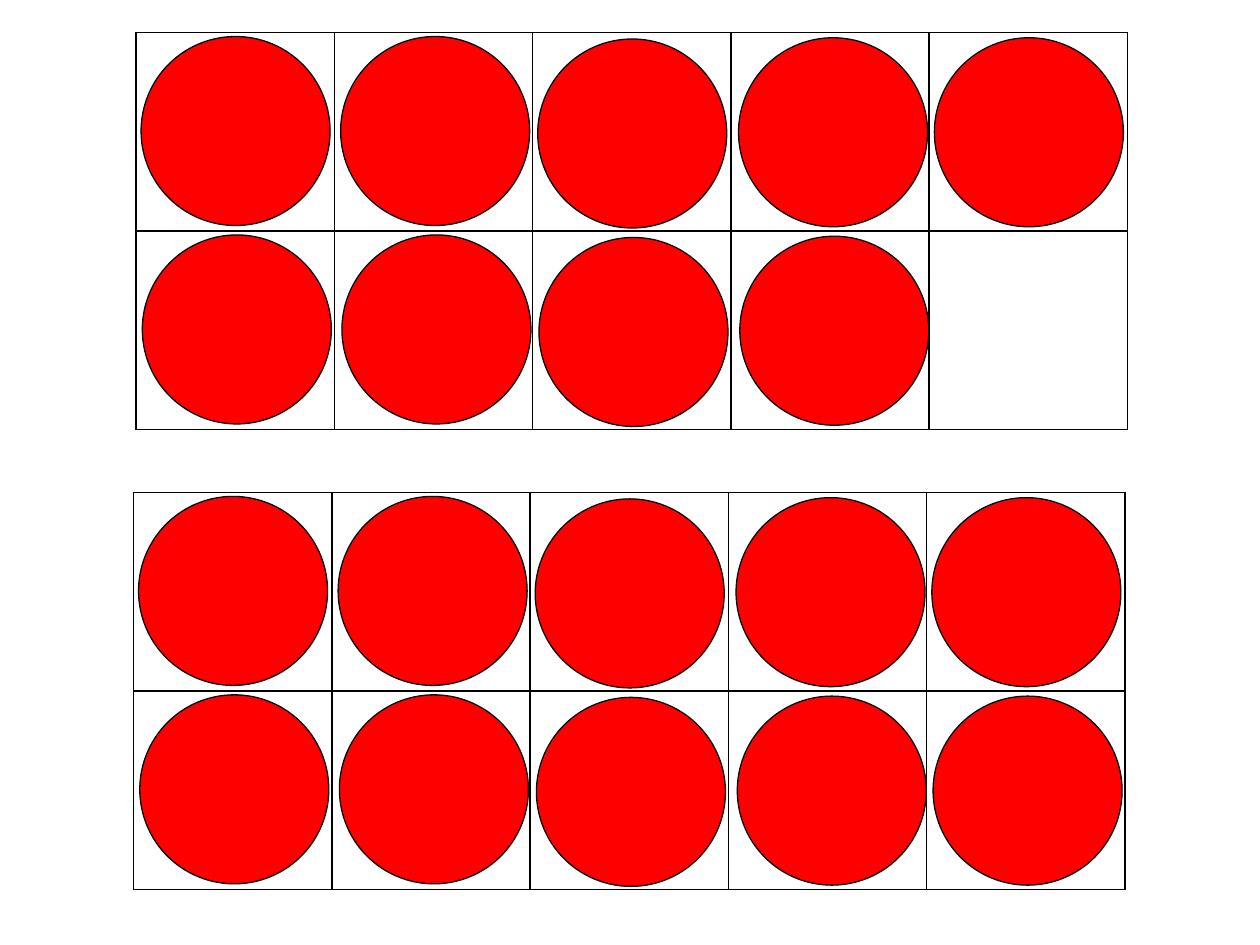
from lxml.etree import SubElement
from pptx import Presentation
from pptx.dml.color import RGBColor
from pptx.enum.shapes import MSO_SHAPE as Shape
from pptx.oxml.ns import qn
from pptx.util import Inches, Pt

RED = RGBColor(0xFF, 0x00, 0x00)
BLACK = RGBColor(0x00, 0x00, 0x00)

# Ten frames: left, top and number of counters
FRAMES = [(1.08, 0.26, 9), (1.06, 3.91, 10)]
ROWS, COLUMNS = 2, 5
FRAME_WIDTH, FRAME_HEIGHT = 7.87, 3.15
CELL_WIDTH, CELL_HEIGHT = FRAME_WIDTH / COLUMNS, FRAME_HEIGHT / ROWS

# Counters sit slightly unevenly in their cells: inset per column
COUNTER_SIZE = 1.5
INSETS = [(0.04, 0.03), (0.05, 0.03), (0.04, 0.05), (0.06, 0.04), (0.04, 0.04)]
ROW_SHIFT = 0.01


def add_borders(cell):
    cell.fill.background()
    properties = cell._tc.get_or_add_tcPr()
    for index, side in enumerate(("lnL", "lnR", "lnT", "lnB")):
        line = SubElement(properties, qn(f"a:{side}"), w=str(Pt(1)))
        fill = SubElement(line, qn("a:solidFill"))
        SubElement(fill, qn("a:srgbClr"), val=str(BLACK))
        properties.insert(index, line)  # borders come before the fill


def add_frame(page, left, top):
    table = page.shapes.add_table(
        ROWS, COLUMNS, Inches(left), Inches(top),
        Inches(FRAME_WIDTH), Inches(FRAME_HEIGHT)).table
    table.first_row = False
    table.horz_banding = False
    for cell in table.iter_cells():
        add_borders(cell)


def add_counter(page, left, top):
    counter = page.shapes.add_shape(
        Shape.OVAL, Inches(left), Inches(top),
        Inches(COUNTER_SIZE), Inches(COUNTER_SIZE))
    counter.shadow.inherit = False
    counter.fill.solid()
    counter.fill.fore_color.rgb = RED
    counter.line.color.rgb = BLACK
    counter.line.width = Pt(0.75)


def main():
    deck = Presentation()
    deck.slide_width, deck.slide_height = Inches(10), Inches(7.5)
    page = deck.slides.add_slide(deck.slide_layouts[6])

    # Each frame is filled row by row
    for left, top, count in FRAMES:
        add_frame(page, left, top)
        for number in range(count):
            row, column = divmod(number, COLUMNS)
            inset_x, inset_y = INSETS[column]
            add_counter(page,
                        left + column * CELL_WIDTH + inset_x + row * ROW_SHIFT,
                        top + row * CELL_HEIGHT + inset_y)

    deck.save("out.pptx")


if __name__ == "__main__":
    main()
